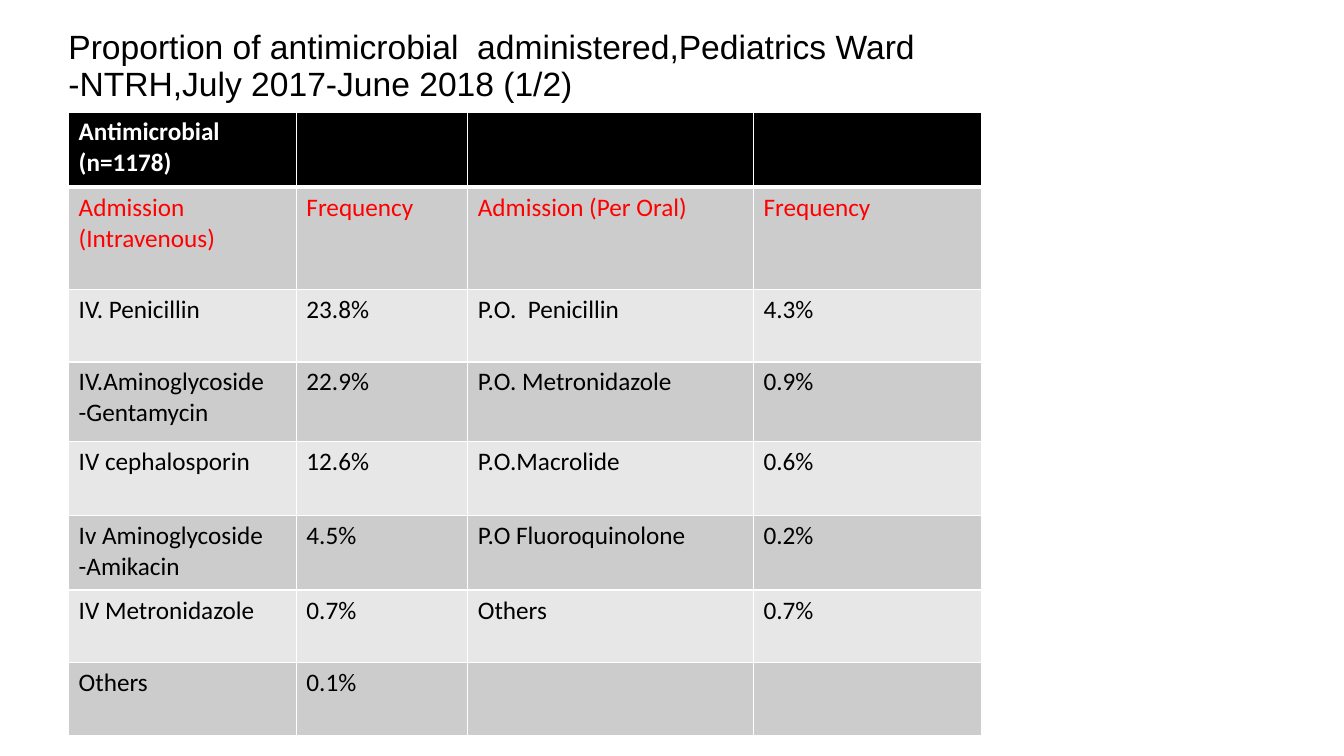
from dataclasses import dataclass

from lxml.etree import SubElement
from pptx import Presentation
from pptx.dml.color import RGBColor
from pptx.enum.text import MSO_ANCHOR, MSO_AUTO_SIZE, PP_ALIGN
from pptx.oxml.ns import qn
from pptx.util import Cm, Pt


@dataclass(frozen=True)
class Theme:
    title_font: str = "Arial"
    body_font: str = "Calibri"
    title_size: int = 24
    body_size: int = 18
    black: str = "000000"
    white: str = "FFFFFF"
    red: str = "FF0000"
    dark_band: str = "CCCCCC"
    light_band: str = "E7E7E7"
    rule: int = 1
    header_rule: int = 3


TITLE = ("Proportion of antimicrobial  administered,Pediatrics Ward "
         "-NTRH,July 2017-June 2018 (1/2)")
COL_WIDTHS = [5.74, 4.32, 7.2, 5.74]
ROW_HEIGHTS = [1.9, 2.57, 1.83, 2.01, 1.87, 1.87, 1.83, 1.83]
ROWS = [
    ["Antimicrobial (n=1178)", "", "", ""],
    ["Admission (Intravenous)", "Frequency", "Admission (Per Oral)", "Frequency"],
    ["IV. Penicillin", "23.8%", "P.O.  Penicillin", "4.3%"],
    ["IV.Aminoglycoside -Gentamycin", "22.9%", "P.O. Metronidazole", "0.9%"],
    ["IV cephalosporin", "12.6%", "P.O.Macrolide", "0.6%"],
    ["Iv Aminoglycoside -Amikacin", "4.5%", "P.O Fluoroquinolone", "0.2%"],
    ["IV Metronidazole", "0.7%", "Others", "0.7%"],
    ["Others", "0.1%", "", ""],
]


class SlideBuilder:
    """Adds styled elements to one slide."""

    def __init__(self, slide, theme):
        self.slide = slide
        self.theme = theme

    def style(self, p, font, size, color, bold=False):
        p.alignment = PP_ALIGN.LEFT
        p.font.name = font
        p.font.size = Pt(size)
        p.font.bold = bold
        p.font.color.rgb = RGBColor.from_string(color)

    def title(self, text, left, top, width, height):
        sp = self.slide.shapes.title
        sp.left, sp.top, sp.width, sp.height = map(Cm, (left, top, width, height))
        tf = sp.text_frame
        tf.text = text
        tf.word_wrap = True
        tf.auto_size = MSO_AUTO_SIZE.NONE
        tf.vertical_anchor = MSO_ANCHOR.MIDDLE
        p = tf.paragraphs[0]
        p.line_spacing = 0.9
        self.style(p, self.theme.title_font, self.theme.title_size, self.theme.black)

    def borders(self, cell, top, bottom):
        tc_pr = cell._tc.get_or_add_tcPr()
        sides = {"L": self.theme.rule, "R": self.theme.rule, "T": top, "B": bottom}
        for side, width in sides.items():
            ln = SubElement(tc_pr, qn(f"a:ln{side}"), w=str(Pt(width)))
            fill = SubElement(ln, qn("a:solidFill"))
            SubElement(fill, qn("a:srgbClr"), val=self.theme.white)

    def row_style(self, row):
        t = self.theme
        if row == 0:
            return t.black, t.white
        band = t.dark_band if row % 2 else t.light_band
        return band, t.red if row == 1 else t.black

    def table(self, rows, left, top, widths, heights):
        t = self.theme
        frame = self.slide.shapes.add_table(
            len(rows), len(widths), Cm(left), Cm(top),
            Cm(sum(widths)), Cm(sum(heights)))
        table = frame.table
        for column, width in zip(table.columns, widths):
            column.width = Cm(width)
        for i, (values, height) in enumerate(zip(rows, heights)):
            table.rows[i].height = Cm(height)
            band, color = self.row_style(i)
            for cell, value in zip(table.rows[i].cells, values):
                cell.text = value
                self.style(cell.text_frame.paragraphs[0], t.body_font,
                           t.body_size, color, bold=i == 0)
                self.borders(cell, t.header_rule if i == 1 else t.rule,
                             t.header_rule if i == 0 else t.rule)
                cell.fill.solid()
                cell.fill.fore_color.rgb = RGBColor.from_string(band)


def main():
    prs = Presentation()
    prs.slide_width, prs.slide_height = Cm(33.87), Cm(19.05)
    s = prs.slides.add_slide(prs.slide_layouts[5])
    builder = SlideBuilder(s, Theme())
    builder.title(TITLE, 1.47, 0.33, 24.28, 2.72)
    builder.table(ROWS, 1.73, 2.82, COL_WIDTHS, ROW_HEIGHTS)
    prs.save("out.pptx")


if __name__ == "__main__":
    main()
